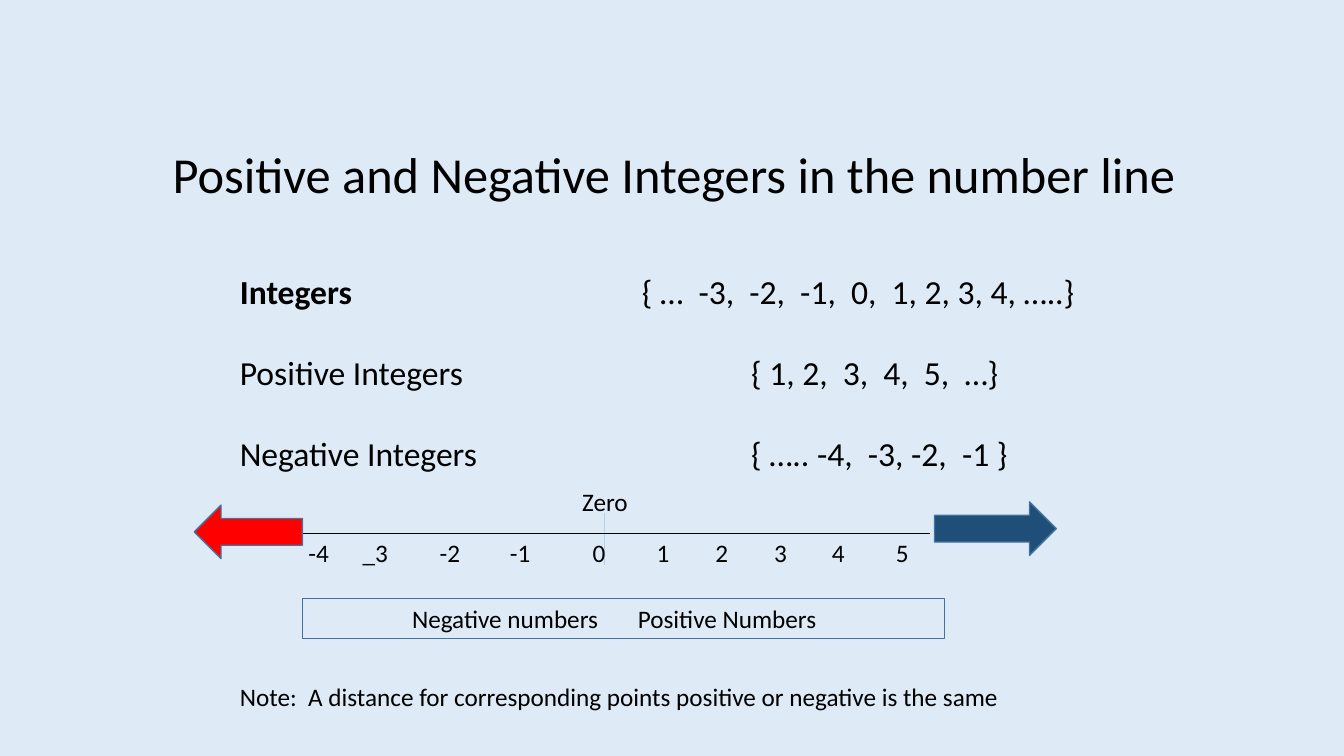
from lxml import etree
from pptx import Presentation
from pptx import util as u
from pptx.dml.color import RGBColor
from pptx.enum import shapes, text
from pptx.oxml import ns

PX = 9525
BLACK = "000000"
OUTLINE = "43739E"


def px(*lengths):
    return [u.Emu(length * PX) for length in lengths]


def colour(hex_text):
    return RGBColor.from_string(hex_text)


def set_tabs(paragraph, stops, align):
    tab_list = etree.SubElement(paragraph._p.get_or_add_pPr(), ns.qn("a:tabLst"))
    for stop in stops:
        etree.SubElement(tab_list, ns.qn("a:tab"), pos=str(stop * PX), algn=align)


def format_runs(paragraph, size):
    for run in paragraph.runs:
        run.font.size = u.Pt(size)
        run.font.name = "Calibri"
        run.font.color.rgb = colour(BLACK)


def add_label(slide, box, wording, size=18, align=text.PP_ALIGN.LEFT):
    label = slide.shapes.add_textbox(*px(*box))
    label.text_frame.word_wrap = True
    label.text_frame.auto_size = text.MSO_AUTO_SIZE.SHAPE_TO_FIT_TEXT
    paragraph = label.text_frame.paragraphs[0]
    paragraph.text = wording
    paragraph.alignment = align
    format_runs(paragraph, size)
    return label.text_frame


def add_sets(slide, box, rows):
    frame = add_label(slide, box, "", 24)
    for index, (name, members, stop) in enumerate(rows):
        paragraph = frame.paragraphs[0] if index == 0 else frame.add_paragraph()
        set_name = paragraph.add_run()
        set_name.text = name
        set_name.font.bold = index == 0
        paragraph.add_run().text = "\t" + members
        format_runs(paragraph, 24)
        if index:
            paragraph.space_before = u.Pt(29)
        set_tabs(paragraph, [stop], "l")


def add_outlined(slide, kind, box, width, fill=None):
    shape = slide.shapes.add_shape(kind, *px(*box))
    shape.shadow.inherit = False
    if fill:
        shape.fill.solid()
        shape.fill.fore_color.rgb = colour(fill)
    else:
        shape.fill.background()
    shape.line.color.rgb = colour(OUTLINE)
    shape.line.width = u.Pt(width)
    return shape


def add_line(slide, ends, hex_text, width):
    line = slide.shapes.add_connector(shapes.MSO_CONNECTOR.STRAIGHT, *px(*ends))
    line.line.color.rgb = colour(hex_text)
    line.line.width = u.Pt(width)
    etree.SubElement(line._element.spPr, ns.qn("a:effectLst"))


def main():
    deck = Presentation()
    deck.slide_width, deck.slide_height = px(1280, 720)
    slide = deck.slides.add_slide(deck.slide_layouts[6])
    slide.background.fill.solid()
    slide.background.fill.fore_color.rgb = colour("DEEBF7")

    add_label(slide, (135, 132, 1014, 68),
              "Positive and Negative Integers in the number line", 36,
              text.PP_ALIGN.CENTER)
    add_sets(slide, (219, 253, 907, 204), [
        ("Integers", "{ …  -3,  -2,  -1,  0,  1, 2, 3, 4, …..}", 383),
        ("Positive Integers", "{ 1, 2,  3,  4,  5,  …}", 487),
        ("Negative Integers", "{ ….. -4,  -3, -2,  -1 }", 487),
    ])

    add_line(slide, (576, 489, 576, 538), "B5D2EC", 0.5)
    add_line(slide, (288, 508, 886, 508), BLACK, 1)
    arrow = shapes.MSO_SHAPE.RIGHT_ARROW
    negative_arrow = add_outlined(slide, arrow, (185, 481, 103, 51), 1, "FF0000")
    negative_arrow.rotation = 180
    add_outlined(slide, arrow, (890, 478, 116, 51), 1, "1F4E79")

    add_label(slide, (545, 458, 97, 38), "Zero")
    ticks = ["-4", "_3", "-2", "-1", "0", "1", "2", "3", "4", "5"]
    tick_stops = [16, 70, 141, 208, 283, 344, 400, 456, 511, 572]
    numbers = add_label(slide, (278, 507, 653, 38), "\t" + "\t".join(ticks))
    set_tabs(numbers.paragraphs[0], tick_stops, "ctr")

    sides = add_outlined(slide, shapes.MSO_SHAPE.RECTANGLE, (288, 570, 612, 38), 0.75)
    sides.text_frame.vertical_anchor = text.MSO_ANCHOR.MIDDLE
    caption = sides.text_frame.paragraphs[0]
    caption.text = "\tNegative numbers\tPositive Numbers"
    caption.alignment = text.PP_ALIGN.LEFT
    format_runs(caption, 18)
    set_tabs(caption, [95, 310], "l")

    add_label(slide, (219, 644, 823, 38),
              "Note:  A distance for corresponding points positive or negative is the same")
    deck.save("out.pptx")


if __name__ == "__main__":
    main()
